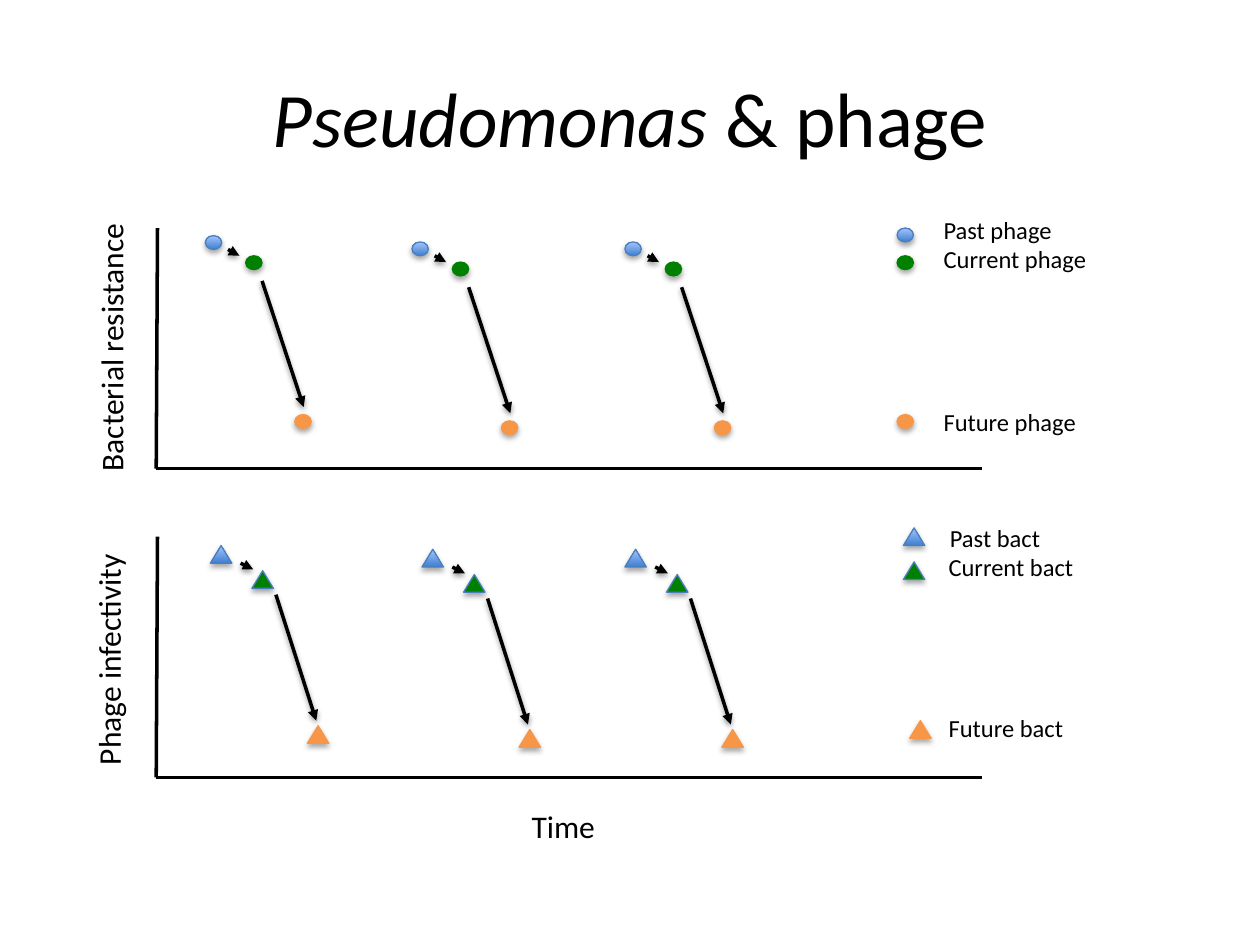
from lxml import etree
from pptx import Presentation
from pptx.dml.color import RGBColor
from pptx.enum.shapes import MSO_CONNECTOR, MSO_SHAPE
from pptx.enum.text import MSO_ANCHOR, MSO_AUTO_SIZE, PP_ALIGN
from pptx.oxml.ns import qn
from pptx.util import Inches, Pt

BLACK, BLUE, GREEN, ORANGE = "000000", "4B7EBC", "008000", "F79646"
BLUE_GRADIENT = ("3F80CE", "A4C4FF")
FILLS = [BLUE_GRADIENT, GREEN, ORANGE]
AXIS_LEFT, AXIS_RIGHT, AXIS_HEIGHT = 1.24, 7.79, 1.91

PANELS = [
    {
        "title": ("Bacterial resistance", -0.22, 2.54, 2.2),
        "axis_top": 1.81,
        "shape": MSO_SHAPE.OVAL,
        "size": (0.13, 0.11),
        "outlines": [BLUE, GREEN, ORANGE],
        "series": [(1.63, 1.87), (3.27, 1.92), (4.96, 1.92)],
        "steps": [(0, 0), (0.32, 0.16), (0.71, 1.42)],
        "arrows": [(0.18, 0.11, 0.27, 0.16), (0.45, 0.36, 0.78, 1.36)],
        "legend": [
            ("Past phage", 7.39, 1.66, 1.07, 7.12, 1.81),
            ("Current phage", 7.39, 1.89, 1.35, 7.12, 2.03),
            ("Future phage", 7.39, 3.18, 1.27, 7.12, 3.29),
        ],
    },
    {
        "title": ("Phage infectivity", -0.09, 5.02, 1.9),
        "axis_top": 4.26,
        "shape": MSO_SHAPE.ISOSCELES_TRIANGLE,
        "size": (0.17, 0.14),
        "outlines": [BLUE, BLUE, ORANGE],
        "series": [(1.67, 4.33), (3.35, 4.36), (4.96, 4.36)],
        "steps": [(0, 0), (0.33, 0.2), (0.77, 1.43)],
        "arrows": [(0.24, 0.14, 0.34, 0.19), (0.52, 0.39, 0.84, 1.39)],
        "legend": [
            ("Past bact", 7.44, 4.1, 0.93, 7.17, 4.19),
            ("Current bact", 7.43, 4.33, 1.2, 7.17, 4.46),
            ("Future bact", 7.43, 5.61, 1.12, 7.22, 5.72),
        ],
    },
]


def rgb(color):
    return RGBColor.from_string(color)


def set_shadow(sp, alpha=None, dist=0):
    sp_pr = sp._element.spPr
    effects = sp_pr.find(qn("a:effectLst"))
    if effects is None:
        effects = etree.SubElement(sp_pr, qn("a:effectLst"))
    if alpha:
        outer = etree.SubElement(effects, qn("a:outerShdw"), blurRad=str(Pt(3.1)),
                                 dist=str(Pt(dist)), dir="5400000", rotWithShape="0")
        color = etree.SubElement(outer, qn("a:srgbClr"), val=BLACK)
        etree.SubElement(color, qn("a:alpha"), val=str(alpha * 1000))


def add_text(shapes, runs, x, y, w, h, size, rotation=0):
    sp = shapes.add_textbox(Inches(x), Inches(y), Inches(w), Inches(h))
    sp.rotation = rotation
    tf = sp.text_frame
    tf.word_wrap = False
    tf.auto_size = MSO_AUTO_SIZE.SHAPE_TO_FIT_TEXT
    p = tf.paragraphs[0]
    for text, italic in runs:
        r = p.add_run()
        r.text = text
        r.font.name, r.font.size, r.font.italic = "Calibri", Pt(size), italic
        r.font.color.rgb = rgb(BLACK)
    return tf


def add_line(shapes, x1, y1, x2, y2, arrow=False):
    line = shapes.add_connector(MSO_CONNECTOR.STRAIGHT, *map(Inches, (x1, y1, x2, y2)))
    line.line.color.rgb = rgb(BLACK)
    line.line.width = Pt(2)
    if arrow:
        etree.SubElement(line.line._get_or_add_ln(), qn("a:tailEnd"), type="triangle")
        set_shadow(line, 38, 1.6)
    else:
        set_shadow(line)


def add_marker(shapes, panel, index, x, y):
    sp = shapes.add_shape(panel["shape"], Inches(x), Inches(y), *map(Inches, panel["size"]))
    fill = FILLS[index]
    if fill == BLUE_GRADIENT:
        sp.fill.gradient()
        sp.fill.gradient_angle = 90
        for stop, color in zip(sp.fill.gradient_stops, fill):
            stop.color.rgb = rgb(color)
    else:
        sp.fill.solid()
        sp.fill.fore_color.rgb = rgb(fill)
    sp.line.color.rgb = rgb(panel["outlines"][index])
    sp.line.width = Pt(0.75)
    sp.shadow.inherit = False
    set_shadow(sp, 35, 1.8)


def add_panel(s, panel):
    top = panel["axis_top"]
    bottom = top + AXIS_HEIGHT
    add_line(s.shapes, AXIS_LEFT + 0.01, top, AXIS_LEFT, bottom)
    add_line(s.shapes, AXIS_LEFT, bottom, AXIS_RIGHT, bottom)
    title, x, y, w = panel["title"]
    add_text(s.shapes, [(title, False)], x, y, w, 0.4, 18, rotation=270)
    for x, y in panel["series"]:
        group = s.shapes.add_group_shape().shapes
        for x1, y1, x2, y2 in panel["arrows"]:
            add_line(group, x + x1, y + y1, x + x2, y + y2, arrow=True)
        for i, (dx, dy) in enumerate(panel["steps"]):
            add_marker(group, panel, i, x + dx, y + dy)
    for i, (label, x, y, w, marker_x, marker_y) in enumerate(panel["legend"]):
        add_text(s.shapes, [(label, False)], x, y, w, 0.34, 14)
        add_marker(s.shapes, panel, i, marker_x, marker_y)


def main():
    prs = Presentation()
    prs.slide_width, prs.slide_height = Inches(10), Inches(7.5)
    s = prs.slides.add_slide(prs.slide_layouts[6])
    tf = add_text(s.shapes, [("Pseudomonas", True), (" & phage", False)], 0.5, 0.3, 9, 1.25, 44)
    tf.word_wrap = True
    tf.auto_size = MSO_AUTO_SIZE.NONE
    tf.vertical_anchor = MSO_ANCHOR.MIDDLE
    tf.paragraphs[0].alignment = PP_ALIGN.CENTER
    for panel in PANELS:
        add_panel(s, panel)
    add_text(s.shapes, [("Time", False)], 4.12, 6.36, 0.71, 0.4, 18)
    prs.save("out.pptx")


if __name__ == "__main__":
    main()
